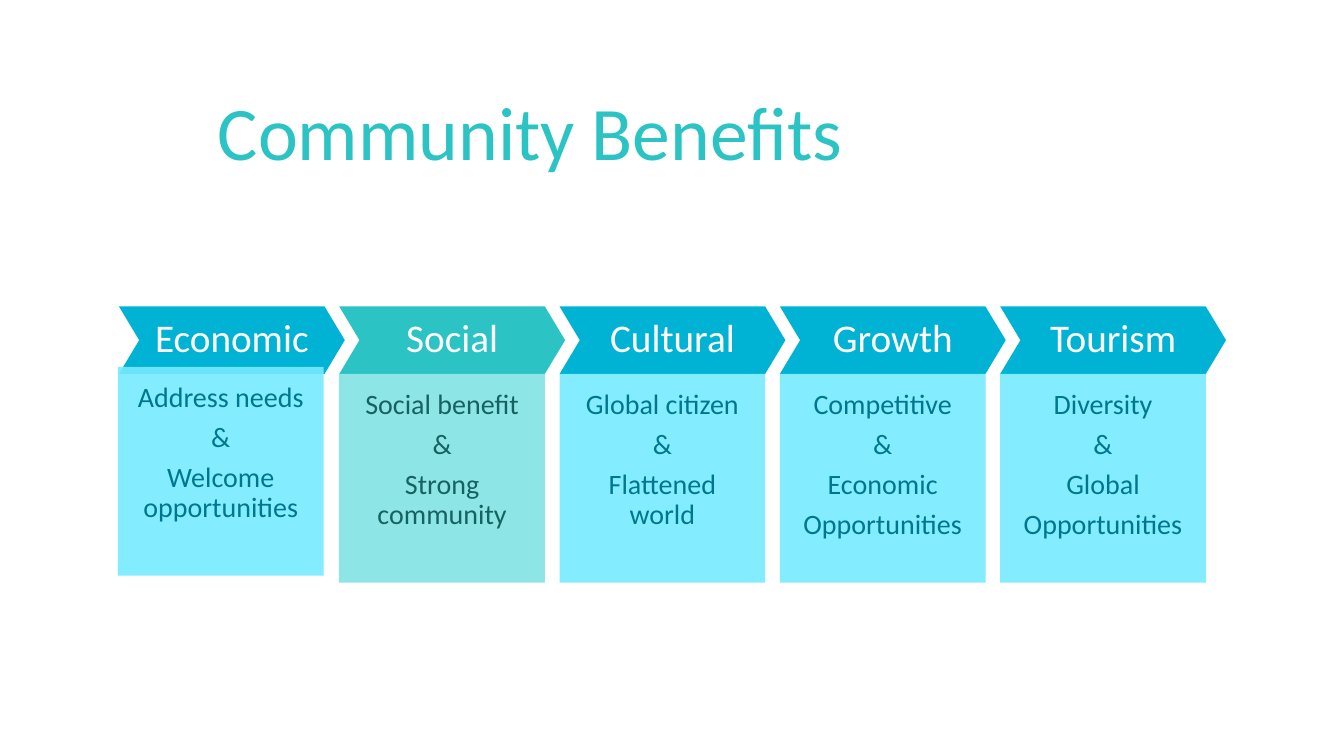
from lxml.etree import SubElement
from pptx import Presentation
from pptx.dml.color import RGBColor as RGB
from pptx.enum.shapes import MSO_SHAPE as Shape
from pptx.enum.text import MSO_ANCHOR as Anchor, MSO_AUTO_SIZE as Fit, PP_ALIGN as Align
from pptx.oxml.ns import qn
from pptx.util import Inches, Pt

# Content: heading, lines below it, colour scheme
TITLE = "Community Benefits"
STEPS = [
    ("Economic", ["Address needs", "&", "Welcome opportunities"], "blue"),
    ("Social", ["Social benefit", "&", "Strong community"], "teal"),
    ("Cultural", ["Global citizen", "&", "Flattened world"], "blue"),
    ("Growth", ["Competitive", "&", "Economic", "Opportunities"], "blue"),
    ("Tourism", ["Diversity", "&", "Global", "Opportunities"], "blue"),
]
HEX = {
    "title": "2BC3C3", "white": "FFFFFF",
    "blue": "00B3D4", "blue body": "76EAFF", "blue text": "00778D",
    "teal": "2BC3C3", "teal body": "82E3E3", "teal text": "166262",
}
FONT = "Calibri"

# Grid in inches
LEFT, TOP, PITCH = 1.18, 3.04, 2.185
HEAD_W, HEAD_H = 2.24, 0.67
BODY_W, BODY_H = 2.04, 2.07
LIFT = {"Economic": (-0.01, -0.07)}  # this body sits a little off the grid


def color(name):
    return RGB.from_string(HEX[name])


def style(para, size, name):
    for run in para.runs:
        run.font.name, run.font.size = FONT, Pt(size)
        run.font.color.rgb = color(name)


def add_box(kind, place, fill, lines, size, ink, pads, anchor):
    box = slide.shapes.add_shape(kind, *map(Inches, place))
    box.shadow.inherit = False
    box.fill.solid()
    box.fill.fore_color.rgb = color(fill)
    box.line.fill.background()
    frame = box.text_frame
    frame.word_wrap, frame.vertical_anchor = True, anchor
    (frame.margin_left, frame.margin_top,
     frame.margin_right, frame.margin_bottom) = map(Inches, pads)
    frame.text = "\n".join(lines)
    for para in frame.paragraphs:
        para.alignment, para.line_spacing = Align.CENTER, 0.9
        para.space_after = Pt(0.35 * size)
        style(para, size, ink)
    return box


deck = Presentation()
deck.slide_width, deck.slide_height = Inches(13.33), Inches(7.5)
slide = deck.slides.add_slide(deck.slide_layouts[5])

# Title
title = slide.shapes.title
title.left, title.top = Inches(2.06), Inches(0.79)
title.width, title.height = Inches(9.8), Inches(1.01)
frame = title.text_frame
frame.text = TITLE
frame.word_wrap, frame.auto_size = True, Fit.NONE
frame.vertical_anchor = Anchor.TOP
frame.paragraphs[0].alignment = Align.LEFT
style(frame.paragraphs[0], 54, "title")

# Chevrons with a body below each
for col, (name, lines, hue) in enumerate(STEPS):
    x = LEFT + col * PITCH
    head = add_box(Shape.CHEVRON, (x, TOP, HEAD_W, HEAD_H), hue, [name],
                   28, "white", [0.08] * 4, Anchor.MIDDLE)
    head.adjustments[0] = 0.3
    dx, dy = LIFT.get(name, (0, 0))
    body = add_box(Shape.RECTANGLE, (x + dx, TOP + HEAD_H + dy, BODY_W, BODY_H),
                   hue + " body", lines, 20, hue + " text",
                   (0.16, 0.16, 0.16, 0.32), Anchor.TOP)
    # Body fill is 90% opaque
    tint = body.fill._xPr.find(".//" + qn("a:srgbClr"))
    SubElement(tint, qn("a:alpha"), val="90000")

deck.save("out.pptx")
